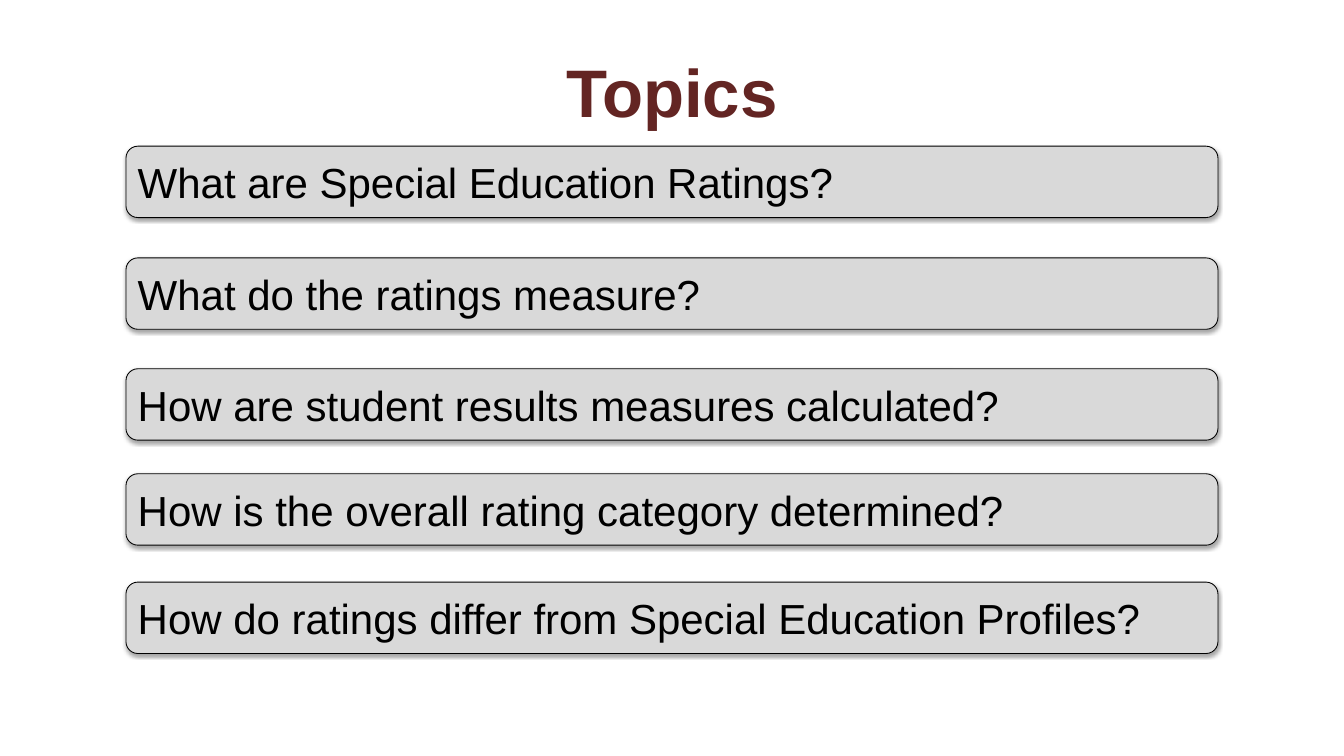
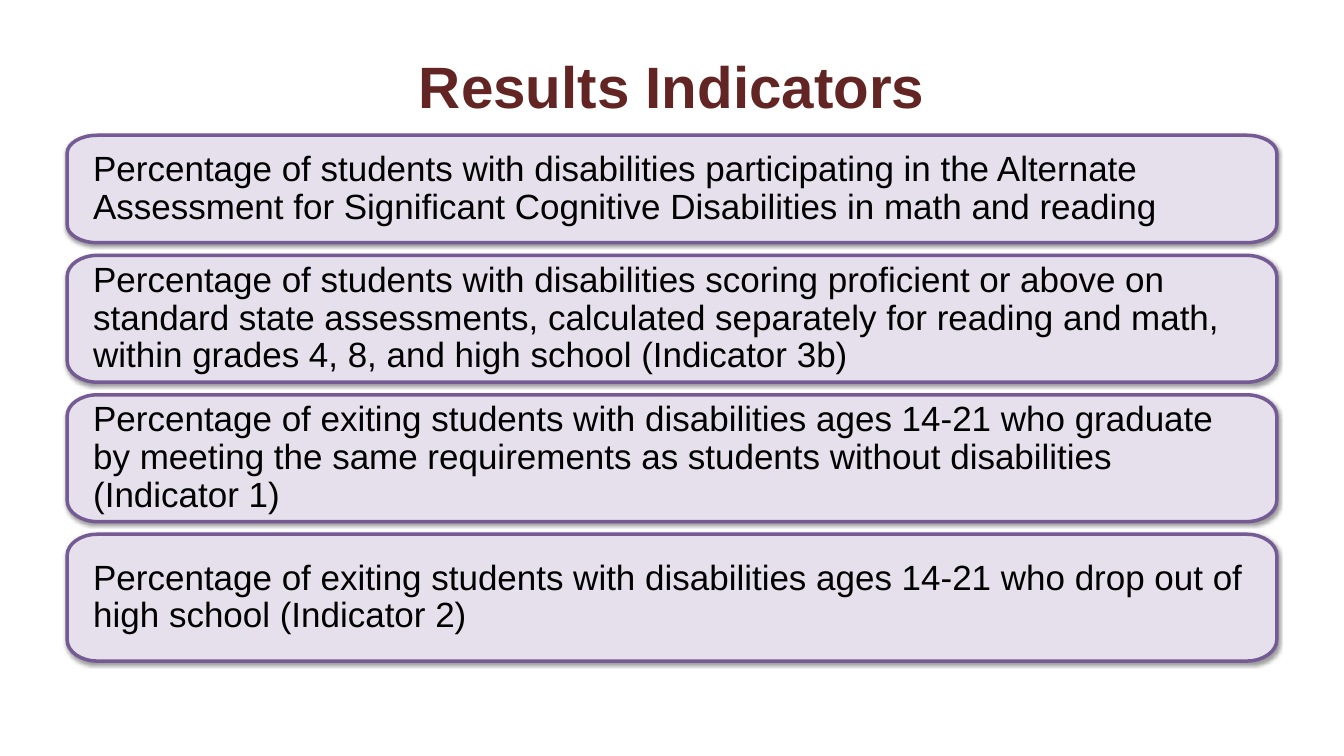
from lxml import etree
from pptx import Presentation, util as u
from pptx.dml.color import RGBColor
from pptx.enum import shapes, text
from pptx.oxml import ns

FONT = "Arial"
SLIDE_WIDTH, SLIDE_HEIGHT = 16, 9
TITLE_TOP = 0.6
MAROON, BLACK = "632523", "000000"
GREY, LAVENDER, PURPLE = "D9D9D9", "E6E0EC", "745B93"

TOPICS = [  # top of the bar, question
    (1.74, "What are Special Education Ratings?"),
    (3.07, "What do the ratings measure?"),
    (4.39, "How are student results measures calculated?"),
    (5.64, "How is the overall rating category determined?"),
    (6.93, "How do ratings differ from Special Education Profiles?"),
]
INDICATORS = [  # height of the panel, description
    (1.28, "Percentage of students with disabilities participating in the "
           "Alternate Assessment for Significant Cognitive Disabilities in "
           "math and reading"),
    (1.51, "Percentage of students with disabilities scoring proficient or "
           "above on standard state assessments, calculated separately for "
           "reading and math, within grades 4, 8, and high school "
           "(Indicator 3b)"),
    (1.51, "Percentage of exiting students with disabilities ages 14-21 who "
           "graduate by meeting the same requirements as students without "
           "disabilities (Indicator 1)"),
    (1.51, "Percentage of exiting students with disabilities ages 14-21 who "
           "drop out of high school (Indicator 2)"),
]


def color(value):
    return RGBColor.from_string(value)


def write(shape, words, size, ink=BLACK, bold=False, inset=(0.1, 0.05),
          align=text.PP_ALIGN.LEFT, anchor=text.MSO_ANCHOR.MIDDLE, spacing=1.0):
    frame = shape.text_frame
    frame.word_wrap = True
    frame.vertical_anchor = anchor
    frame.margin_left = frame.margin_right = u.Inches(inset[0])
    frame.margin_top = frame.margin_bottom = u.Inches(inset[1])
    paragraph = frame.paragraphs[0]
    paragraph.text = words
    paragraph.alignment = align
    paragraph.line_spacing = spacing
    font = paragraph.font
    font.name, font.size, font.bold = FONT, u.Pt(size), bold
    font.color.rgb = color(ink)


def paint(shape, fill, line, width, shadow_opacity, shadow_distance):
    shape.fill.solid()
    shape.fill.fore_color.rgb = color(fill)
    shape.line.color.rgb = color(line)
    shape.line.width = u.Pt(width)
    # Soft shadow straight below
    shape.shadow.inherit = False
    effects = shape._element.spPr.find(ns.qn("a:effectLst"))
    shadow = etree.SubElement(
        effects, ns.qn("a:outerShdw"), blurRad=str(u.Pt(3.1)),
        dist=str(u.Pt(shadow_distance)), dir="5400000", rotWithShape="0")
    tint = etree.SubElement(shadow, ns.qn("a:srgbClr"), val=BLACK)
    etree.SubElement(tint, ns.qn("a:alpha"), val=str(shadow_opacity * 1000))


def add_title(slide, words, left, height, size):
    box = slide.shapes.add_textbox(
        u.Inches(left), u.Inches(TITLE_TOP),
        u.Inches(SLIDE_WIDTH - 2 * left), u.Inches(height))
    write(box, words, size, MAROON, True, (0, 0),
          text.PP_ALIGN.CENTER, text.MSO_ANCHOR.BOTTOM)


def add_topic_bar(slide, words, left, top, width, height):
    bar = slide.shapes.add_shape(
        shapes.MSO_SHAPE.ROUNDED_RECTANGLE,
        *(u.Inches(length) for length in (left, top, width, height)))
    paint(bar, GREY, BLACK, 0.75, 35, 1.8)
    write(bar, words, 36)


def round_corners(panel, points, corners):
    """Turn every other edge of the outline into a curve towards its corner."""
    outline = panel._element.spPr.find(".//" + ns.qn("a:path"))
    edges = list(outline)[1::2]
    for edge, start, end, corner in zip(edges, points[::2], points[1::2], corners):
        curve = etree.Element(ns.qn("a:cubicBezTo"))
        handles = [[p + 0.55 * (c - p) for p, c in zip(point, corner)]
                   for point in (start, end)]
        for x, y in (*handles, end):
            etree.SubElement(curve, ns.qn("a:pt"), x=str(round(x - panel.left)),
                             y=str(round(y - panel.top)))
        outline.replace(edge, curve)


def add_indicator_panel(slide, words, left, top, width, height):
    radius_x, radius_y = u.Inches(0.36), u.Inches(height / 6)
    x1, x2 = u.Inches(left), u.Inches(left + width)
    y1, y2 = u.Inches(top), u.Inches(top + height)
    # Clockwise from the left edge, two points around each corner
    points = [(x1, y1 + radius_y), (x1 + radius_x, y1),
              (x2 - radius_x, y1), (x2, y1 + radius_y),
              (x2, y2 - radius_y), (x2 - radius_x, y2),
              (x1 + radius_x, y2), (x1, y2 - radius_y)]
    builder = slide.shapes.build_freeform(*points[0])
    builder.add_line_segments(points[1:] + points[:1], close=True)
    panel = builder.convert_to_shape()
    round_corners(panel, points, [(x1, y1), (x2, y1), (x2, y2), (x1, y2)])
    paint(panel, LAVENDER, PURPLE, 3, 38, 1.6)
    write(panel, words, 30, inset=(0.31, 0.31), spacing=0.9)


def add_topics_slide(slide):
    add_title(slide, "Topics", 2.6, 0.96, 57.6)
    for top, question in TOPICS:
        add_topic_bar(slide, question, 1.5, top, SLIDE_WIDTH - 3, 0.85)


def add_indicators_slide(slide):
    margin, top, gap = 0.8, 1.61, 0.15
    add_title(slide, "Results Indicators", margin, 0.83, 50)
    for height, description in INDICATORS:
        add_indicator_panel(slide, description, margin, top,
                            SLIDE_WIDTH - 2 * margin, height)
        top += height + gap


def main():
    presentation = Presentation()
    presentation.slide_width = u.Inches(SLIDE_WIDTH)
    presentation.slide_height = u.Inches(SLIDE_HEIGHT)
    for build in (add_topics_slide, add_indicators_slide):
        build(presentation.slides.add_slide(presentation.slide_layouts[6]))
    presentation.save("out.pptx")


if __name__ == "__main__":
    main()
